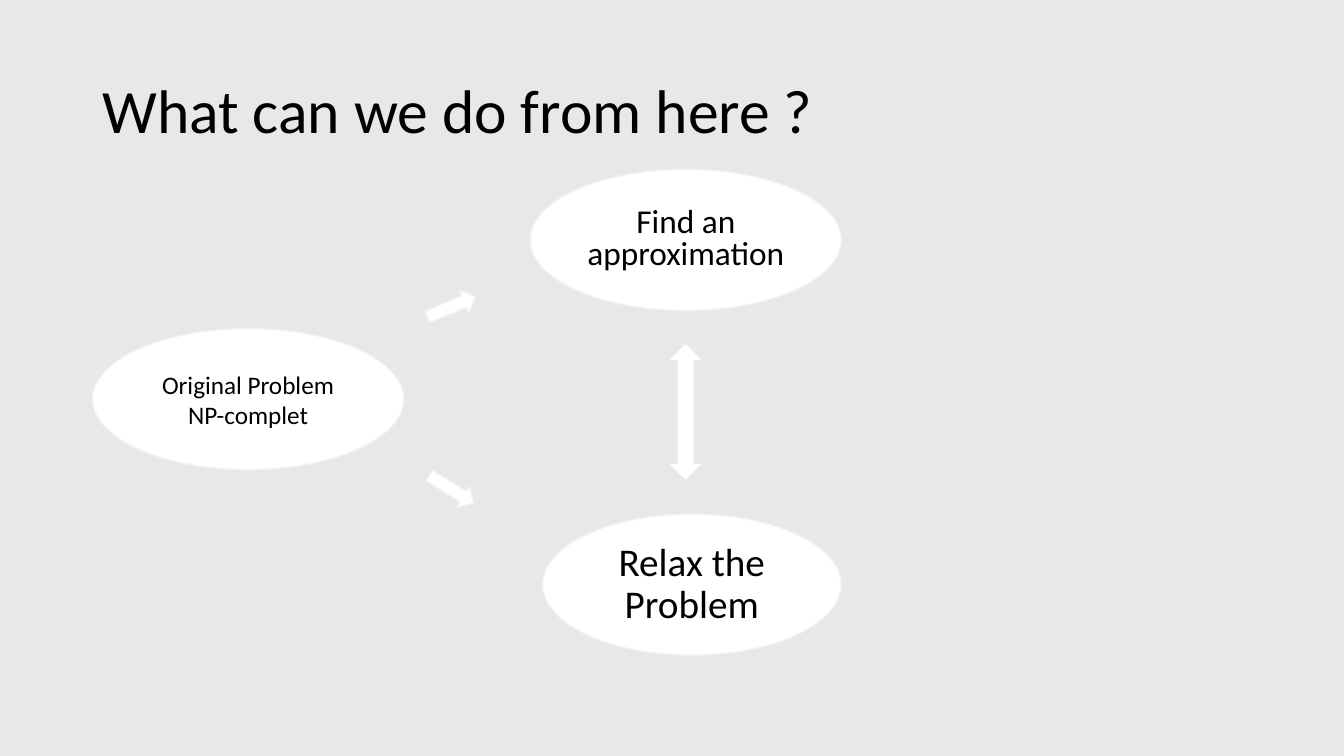
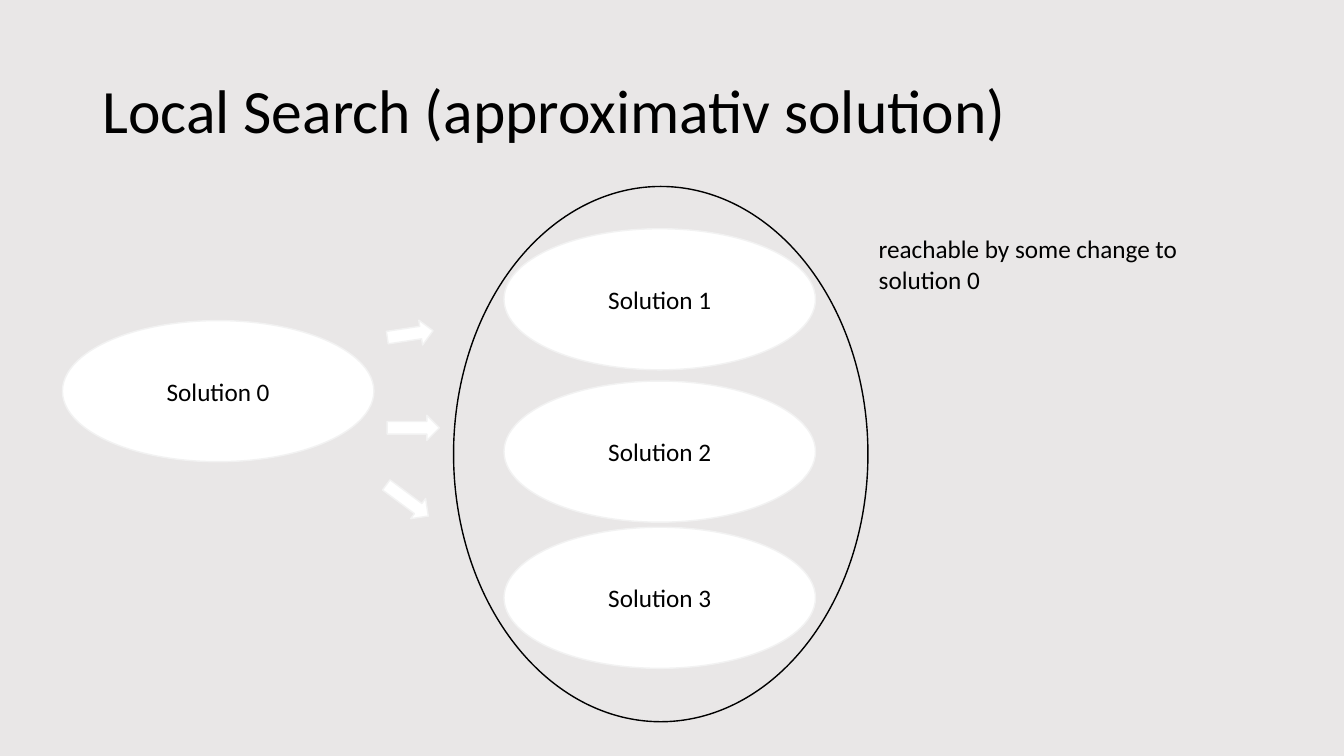
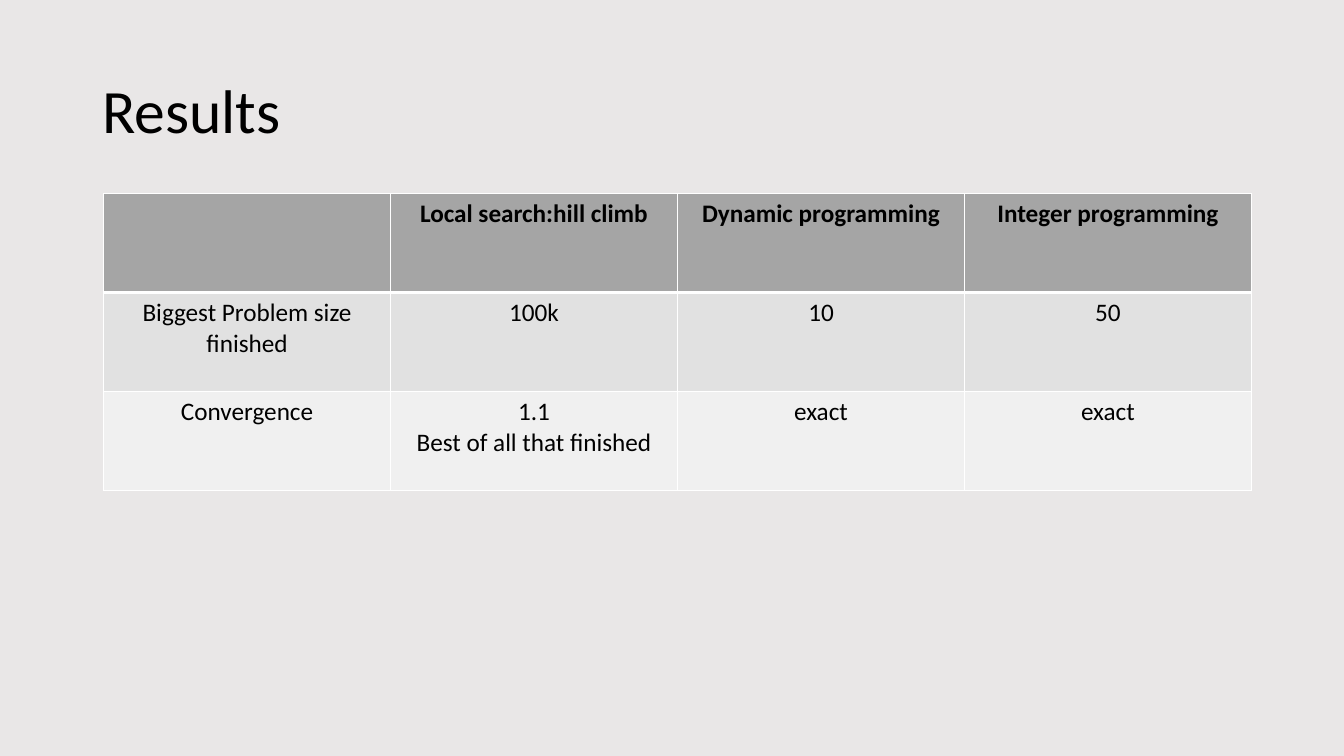
from lxml import etree
from pptx import Presentation
from pptx.dml.color import RGBColor
from pptx.enum.shapes import MSO_SHAPE
from pptx.enum.text import MSO_ANCHOR, PP_ALIGN
from pptx.oxml.ns import qn
from pptx.util import Pt

BACKGROUND = RGBColor(0xE9, 0xE7, 0xE7)
BLACK = RGBColor(0x00, 0x00, 0x00)
WHITE = RGBColor(0xFF, 0xFF, 0xFF)
OUTLINE = RGBColor(0xF2, 0xF2, 0xF2)
ROW_FILLS = (
    RGBColor(0xA5, 0xA5, 0xA5),
    RGBColor(0xE1, 0xE1, 0xE1),
    RGBColor(0xF0, 0xF0, 0xF0),
)
FONT = "Calibri"
BODY_SIZE = 18
TITLE_SIZE = 44

OVAL = MSO_SHAPE.OVAL
RIGHT_ARROW = MSO_SHAPE.RIGHT_ARROW
LEFT_RIGHT_ARROW = MSO_SHAPE.LEFT_RIGHT_ARROW
LEFT = PP_ALIGN.LEFT
CENTER = PP_ALIGN.CENTER
MIDDLE = MSO_ANCHOR.MIDDLE

OVAL_WIDTH, OVAL_HEIGHT = 222.5, 100.8
ARROW_WIDTH, ARROW_HEIGHT = 37.4, 18


def write(frame, text, size=BODY_SIZE, align=CENTER, spacing=None, before=None, bold=False):
    frame.word_wrap = True
    frame.text = text
    for para in frame.paragraphs:
        para.alignment = align
        para.line_spacing = spacing
        if before:
            para.space_before = Pt(before)
        para.font.size = Pt(size)
        for span in para.runs:
            span.font.name = FONT
            span.font.size = Pt(size)
            span.font.bold = bold
            span.font.color.rgb = BLACK


def draw(page, kind, left, top, width, height, line=OUTLINE, rotation=0):
    shape = page.shapes.add_shape(kind, Pt(left), Pt(top), Pt(width), Pt(height))
    shape.shadow.inherit = False
    shape.fill.solid()
    shape.fill.fore_color.rgb = WHITE
    shape.line.color.rgb = line
    shape.line.width = Pt(1)
    shape.rotation = rotation
    shape.text_frame.vertical_anchor = MIDDLE
    return shape


deck = Presentation()
deck.slide_width = Pt(960)
deck.slide_height = Pt(540)
master_fill = deck.slide_master.background.fill
master_fill.solid()
master_fill.fore_color.rgb = BACKGROUND

pages = []
for title in ("What can we do from here ?", "Local Search (approximativ solution)", "Results"):
    page = deck.slides.add_slide(deck.slide_layouts[6])
    box = page.shapes.add_textbox(Pt(66), Pt(28.8), Pt(828), Pt(104.4))
    box.text_frame.vertical_anchor = MIDDLE
    write(box.text_frame, title, TITLE_SIZE, LEFT, 0.9)
    pages.append(page)
options_page, search_page, results_page = pages

options = (
    ("Original Problem\nNP-complet", 66, 234.7, OVAL_WIDTH, BODY_SIZE, None, None),
    ("Relax the Problem", 387.5, 367.2, 213.4, 28, 0.9, 10),
    ("Find an approximation", 378.6, 121, OVAL_WIDTH, 23.8, 0.8, 10),
)
for text, left, top, width, size, spacing, before in options:
    oval = draw(options_page, OVAL, left, top, width, OVAL_HEIGHT)
    write(oval.text_frame, text, size, CENTER, spacing, before)

for top, rotation in ((210.2, 337.4), (340.6, 32.2)):
    draw(options_page, RIGHT_ARROW, 303.8, top, ARROW_WIDTH, ARROW_HEIGHT, rotation=rotation)
draw(options_page, LEFT_RIGHT_ARROW, 441.8, 283.7, 95.8, 21, line=WHITE, rotation=90)

solutions = ((44.6, 229), (360, 163.4), (360, 272.2), (360, 376.6))
for number, (left, top) in enumerate(solutions):
    oval = draw(search_page, OVAL, left, top, OVAL_WIDTH, OVAL_HEIGHT)
    write(oval.text_frame, f"Solution {number}")

search_arrows = ((276.5, 229.7, 33.1, 351.4), (276.5, 296.6, ARROW_WIDTH, 0), (272.2, 348.5, ARROW_WIDTH, 36.5))
for left, top, width, rotation in search_arrows:
    draw(search_page, RIGHT_ARROW, left, top, width, ARROW_HEIGHT, rotation=rotation)

neighbourhood = draw(search_page, OVAL, 324, 133.2, 296, 382.3, line=BLACK)
neighbourhood.fill.background()
note = search_page.shapes.add_textbox(Pt(620.6), Pt(163.4), Pt(254.2), Pt(51))
write(note.text_frame, "reachable by some change to solution 0", align=LEFT)

results = (
    ("", "Local search:hill climb", "Dynamic programming", "Integer programming"),
    ("Biggest Problem size finished", "100k", "10", "50"),
    ("Convergence", "1.1\nBest of all that finished", "exact", "exact"),
)
frame = results_page.shapes.add_table(3, 4, Pt(74), Pt(138.2), Pt(820), Pt(212.4))
table = frame.table
for column in table.columns:
    column.width = Pt(205)
for row_index, texts in enumerate(results):
    table.rows[row_index].height = Pt(70.8)
    for column_index, text in enumerate(texts):
        cell = table.cell(row_index, column_index)
        write(cell.text_frame, text, bold=row_index == 0)
        properties = cell._tc.get_or_add_tcPr()
        for side in ("lnL", "lnR", "lnT", "lnB"):
            thick = (row_index, side) in ((0, "lnB"), (1, "lnT"))
            border = etree.SubElement(properties, qn(f"a:{side}"), w=str(Pt(3 if thick else 1)))
            paint = etree.SubElement(border, qn("a:solidFill"))
            etree.SubElement(paint, qn("a:srgbClr"), val=str(WHITE))
        cell.fill.solid()
        cell.fill.fore_color.rgb = ROW_FILLS[row_index]

deck.save("out.pptx")
